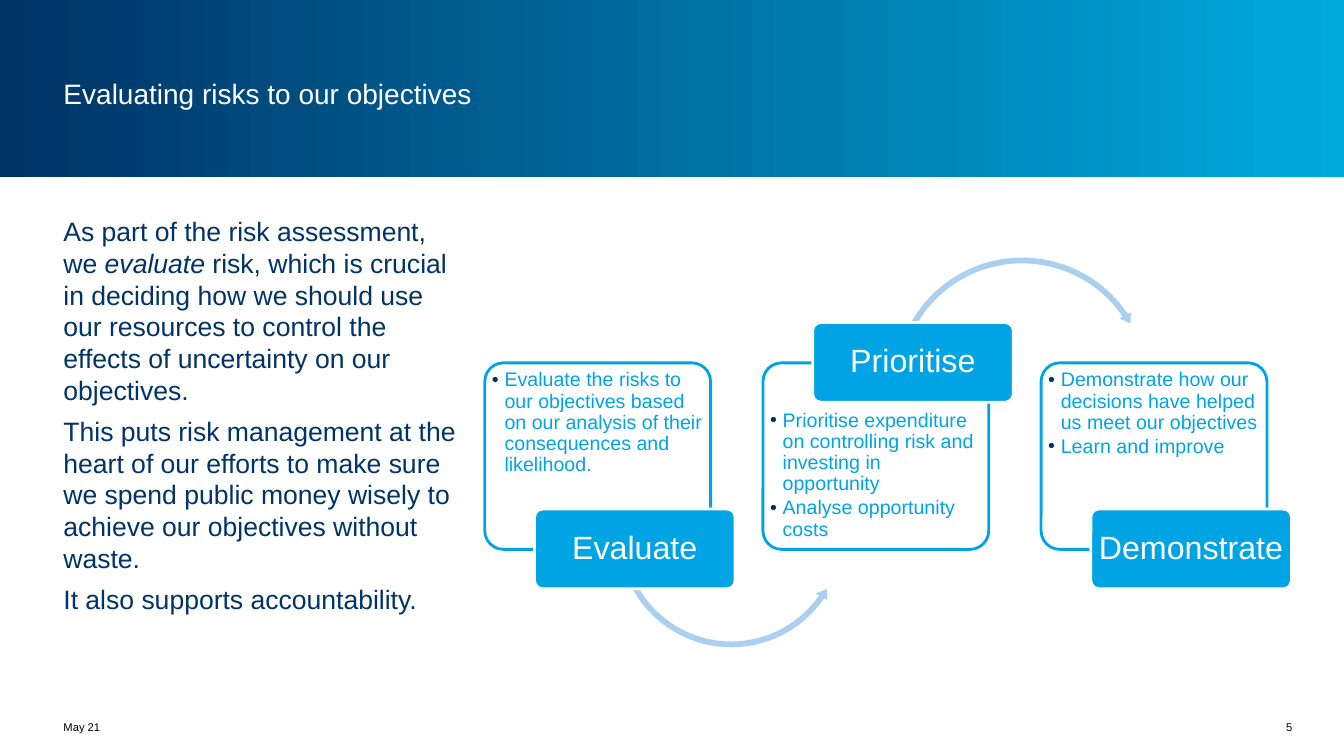
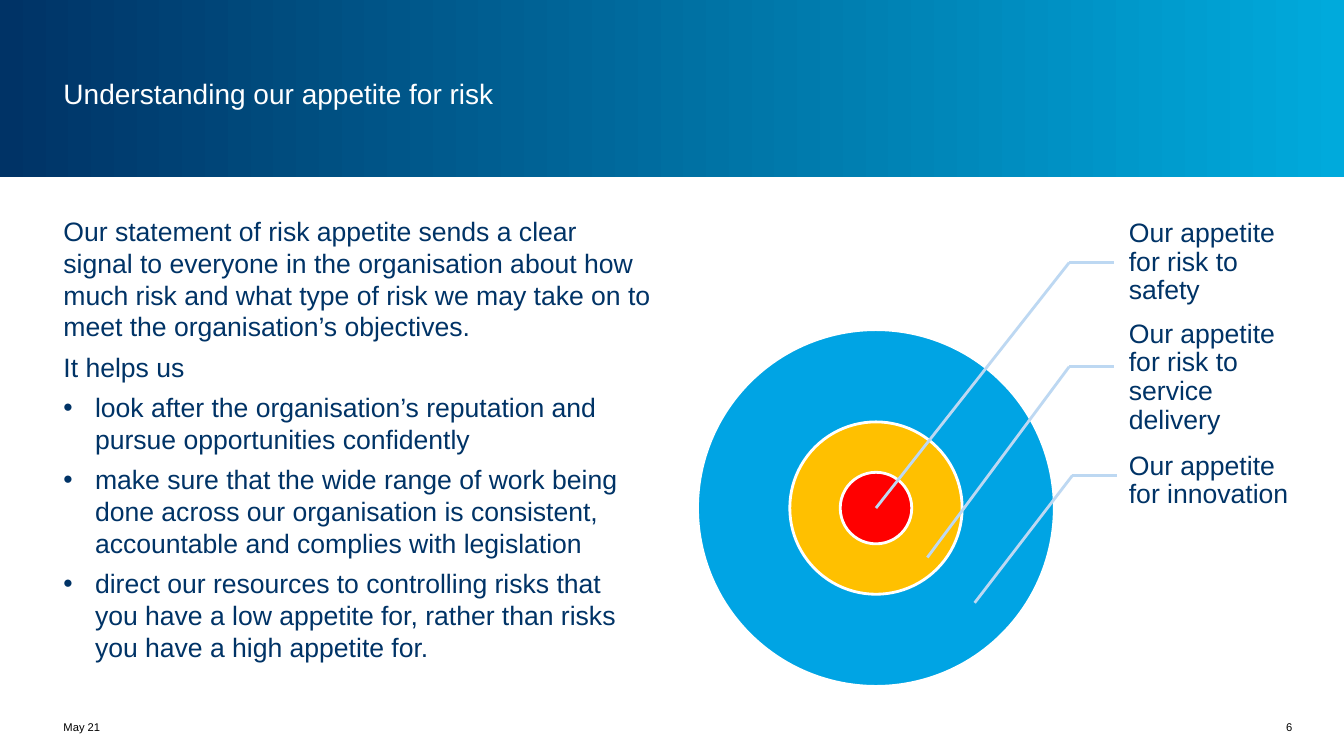
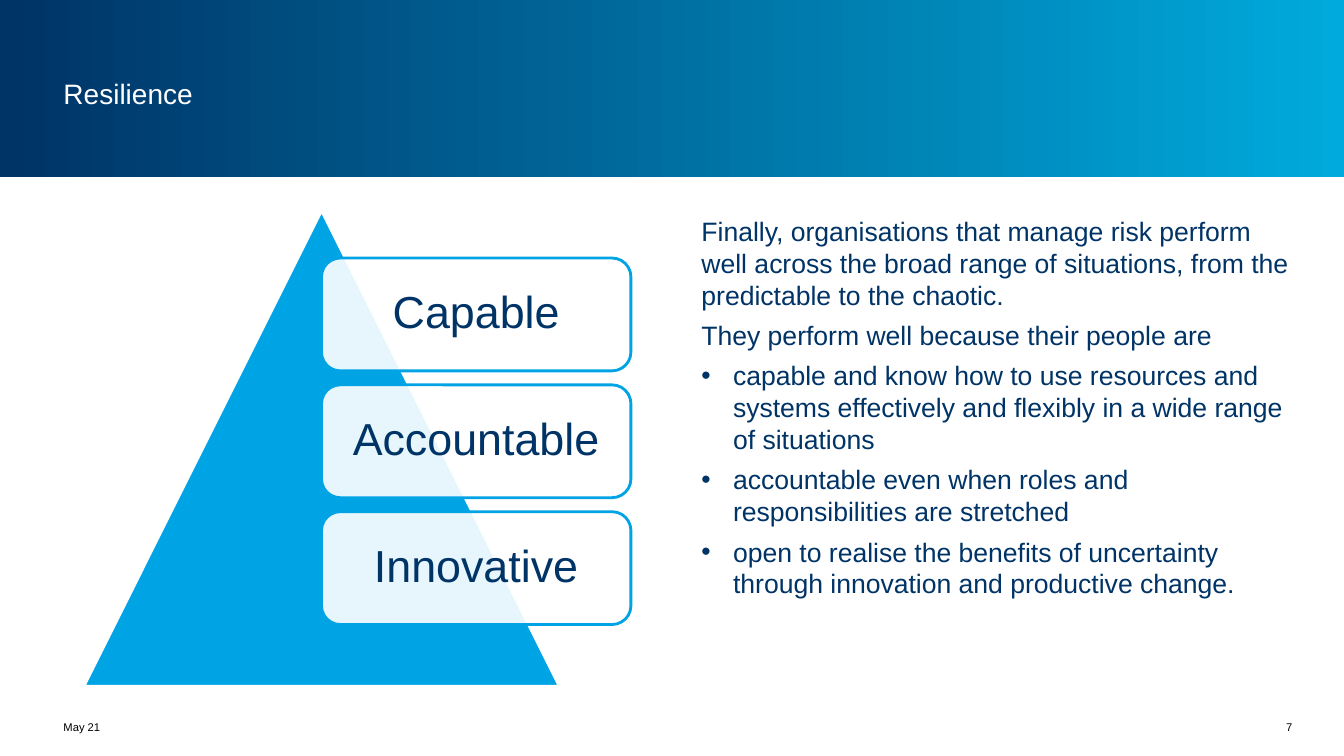
from dataclasses import dataclass

from lxml import etree
from pptx import Presentation
from pptx.dml.color import RGBColor
from pptx.enum.shapes import MSO_CONNECTOR, MSO_SHAPE
from pptx.enum.text import MSO_ANCHOR, MSO_AUTO_SIZE, PP_ALIGN
from pptx.oxml.ns import qn
from pptx.presentation import Presentation as Deck
from pptx.shapes.autoshape import Shape
from pptx.shapes.connector import Connector
from pptx.slide import Slide, SlideLayout
from pptx.text.text import TextFrame
from pptx.util import Pt

RECTANGLE, ROUNDED = MSO_SHAPE.RECTANGLE, MSO_SHAPE.ROUNDED_RECTANGLE
OVAL, TRIANGLE = MSO_SHAPE.OVAL, MSO_SHAPE.ISOSCELES_TRIANGLE
ARC_UNDER, ARC_OVER = MSO_SHAPE.LEFT_CIRCULAR_ARROW, MSO_SHAPE.CIRCULAR_ARROW
TOP, MIDDLE = MSO_ANCHOR.TOP, MSO_ANCHOR.MIDDLE
LEFT, CENTER, RIGHT = PP_ALIGN.LEFT, PP_ALIGN.CENTER, PP_ALIGN.RIGHT
STRAIGHT = MSO_CONNECTOR.STRAIGHT
LEFT_SIDE = 1

NAVY, SKY, CYAN = "003366", "00A4E4", "00AADC"
WHITE, BLACK, AMBER, RED = "FFFFFF", "000000", "FFC000", "FF0000"
ARC_BLUE, LEADER_BLUE = "ABCFEF", "BDD8F2"
FONT = "Arial"
SLIDE_WIDTH, SLIDE_HEIGHT = 960, 540
MARGIN = 42.5
BODY_TOP, BODY_HEIGHT = 150.5, 339.8
HALF_WIDTH, RIGHT_HALF = 425.5, 498.2
INSET = 2.83

Box = tuple[float, float, float, float]
Insets = tuple[float, float, float, float]


@dataclass(frozen=True)
class TextStyle:
    size: float
    color: str
    align: PP_ALIGN = LEFT
    anchor: MSO_ANCHOR = TOP
    insets: Insets = (INSET,) * 4
    line_spacing: float | None = None
    space_after: float = 0
    indent: float = 0
    bullet_color: str = NAVY


TITLE = TextStyle(20, WHITE, anchor=MIDDLE)
DATE = TextStyle(8, BLACK, anchor=MIDDLE)
NUMBER = TextStyle(8, BLACK, RIGHT, MIDDLE)
BODY = TextStyle(19, NAVY, space_after=6, indent=22.6)
TAG = TextStyle(23, WHITE, CENTER, MIDDLE, (3, 2, 3, 2), 0.9)
LABEL = TextStyle(19, NAVY, LEFT, MIDDLE, (10.8, 2.2, 2.2, 2.2), 0.9)
QUALITY = TextStyle(32, NAVY, CENTER, MIDDLE, (9, 9, 9, 9), 0.9)


@dataclass(frozen=True)
class Step:
    name: str
    points: list[str]
    tag_on_top: bool = False


@dataclass(frozen=True)
class Arc:
    kind: MSO_SHAPE
    left: float
    top: float
    size: float
    adjustments: tuple[float, ...]


@dataclass(frozen=True)
class AppetiteLevel:
    label: str
    diameter: float
    color: str
    label_top: float
    label_height: float
    elbow: tuple[float, float]
    target: tuple[float, float]


STEPS = [
    Step("Evaluate", [
        "• Evaluate the risks to our objectives based on our analysis of their "
        "consequences and likelihood."]),
    Step("Prioritise", [
        "• Prioritise expenditure on controlling risk and investing in opportunity",
        "• Analyse opportunity costs"], tag_on_top=True),
    Step("Demonstrate", [
        "• Demonstrate how our decisions have helped us meet our objectives",
        "• Learn and improve"]),
]
ARCS = [
    Arc(ARC_UNDER, 439.2, 298.8, 166.3, (0.025, 2.974, 20.729, 90.245, 0.029)),
    Arc(ARC_OVER, 636.5, 181.4, 187.2, (0.022, 2.629, 195.616, 125.755, 0.025)),
]
TARGET_CENTER = (625.7, 362.9)
LABEL_LEFT, LABEL_WIDTH, LEADER_LENGTH = 795.6, 127.4, 31.9
# Widest ring first, so that the smaller ones lie on it
LEVELS = [
    AppetiteLevel("Our appetite for innovation", 254.9, SKY,
                  320.4, 46.1, (766, 339.7), (696.2, 430.6)),
    AppetiteLevel("Our appetite for risk to service delivery", 123.1, AMBER,
                  232.6, 74.2, (763.7, 262), (662.4, 398.2)),
    AppetiteLevel("Our appetite for risk to safety", 51.1, RED,
                  150.5, 74.2, (763.7, 187.6), TARGET_CENTER),
]


def rgb(color: str) -> RGBColor:
    return RGBColor.from_string(color)


def write(frame: TextFrame, texts: list[str], style: TextStyle) -> None:
    """Fill a frame; a leading "• " makes a bullet, *stars* make italics."""
    frame.word_wrap = True
    frame.auto_size = MSO_AUTO_SIZE.NONE
    frame.vertical_anchor = style.anchor
    (frame.margin_left, frame.margin_top,
     frame.margin_right, frame.margin_bottom) = map(Pt, style.insets)
    for index, text in enumerate(texts):
        para = frame.add_paragraph() if index else frame.paragraphs[0]
        para.alignment = style.align
        para.line_spacing = style.line_spacing
        para.space_after = Pt(style.space_after)
        if text.startswith("• "):
            text = text.removeprefix("• ")
            properties = para._p.get_or_add_pPr()
            properties.set("marL", str(Pt(style.indent)))
            properties.set("indent", str(-Pt(style.indent)))
            bullet_color = etree.SubElement(properties, qn("a:buClr"))
            etree.SubElement(bullet_color, qn("a:srgbClr"), val=style.bullet_color)
            etree.SubElement(properties, qn("a:buFont"), typeface=FONT)
            etree.SubElement(properties, qn("a:buChar"), char="•")
        para.font.name = FONT
        para.font.size = Pt(style.size)
        para.font.color.rgb = rgb(style.color)
        for position, part in enumerate(text.split("*")):
            span = para.add_run()
            span.text = part
            if position % 2:
                span.font.italic = True


def add_text(page: Slide, area: Box, texts: list[str], style: TextStyle) -> Shape:
    box = page.shapes.add_textbox(*map(Pt, area))
    write(box.text_frame, texts, style)
    return box


def add_figure(page: Slide, kind: MSO_SHAPE, area: Box, fill: str,
               line: str | None = None, opacity: int = 100) -> Shape:
    figure = page.shapes.add_shape(kind, *map(Pt, area))
    figure.shadow.inherit = False
    figure.fill.solid()
    figure.fill.fore_color.rgb = rgb(fill)
    if opacity < 100:
        color = figure.element.spPr.find(qn("a:solidFill")).find(qn("a:srgbClr"))
        etree.SubElement(color, qn("a:alpha"), val=str(opacity * 1000))
    if line:
        figure.line.color.rgb = rgb(line)
        figure.line.width = Pt(2)
    else:
        figure.line.fill.background()
    return figure


def add_leader(page: Slide, start: tuple[float, float],
               end: tuple[float, float]) -> Connector:
    leader = page.shapes.add_connector(STRAIGHT, *map(Pt, (*start, *end)))
    leader.line.color.rgb = rgb(LEADER_BLUE)
    leader.line.width = Pt(2)
    etree.SubElement(leader.element.spPr, qn("a:effectLst"))
    return leader


def add_layout_band(page: Slide, layout: SlideLayout) -> None:
    """Draw the title band and move it to the layout all pages share."""
    band = add_figure(page, RECTANGLE, (0, 0, SLIDE_WIDTH, 126.7), NAVY)
    band.fill.gradient()
    band.fill.gradient_angle = 0
    for stop, color in zip(band.fill.gradient_stops, (NAVY, CYAN)):
        stop.color.rgb = rgb(color)
    band.element.nvSpPr.cNvPr.set("id", "20")
    layout.shapes.element.insert(2, band.element)


def add_page(deck: Deck, layout: SlideLayout, title: str, number: int) -> Slide:
    page = deck.slides.add_slide(layout)
    heading = page.shapes.title
    heading.left, heading.top, heading.width, heading.height = map(
        Pt, (MARGIN, 21.6, 717.8, 90.7))
    write(heading.text_frame, [title], TITLE)
    add_text(page, (MARGIN, 510.5, 151.2, 17.3), ["May 21"], DATE)
    add_text(page, (850.3, 510.5, 75.6, 17.3), [str(number)], NUMBER)
    return page


def add_body(page: Slide, left: float, width: float, texts: list[str]) -> None:
    add_text(page, (left, BODY_TOP, width, BODY_HEIGHT), texts, BODY)


def draw_steps(page: Slide) -> None:
    for index, step in enumerate(STEPS):
        left = 346.3 + index * 198.7
        card = add_figure(page, ROUNDED, (left, 259.2, 161.3, 133.2), WHITE, SKY, 90)
        card.adjustments[0] = 0.1
        inset_top = 30 if step.tag_on_top else 1.2
        write(card.text_frame, step.points, TextStyle(
            14, SKY, insets=(1.2, inset_top, 1.2, 1.2), line_spacing=0.9,
            space_after=2, indent=9))
        if index < len(ARCS):
            arc = ARCS[index]
            arrow = add_figure(page, arc.kind, (arc.left, arc.top, arc.size, arc.size),
                               ARC_BLUE)
            for position, value in enumerate(arc.adjustments):
                arrow.adjustments[position] = value
        tag_top = 230.4 if step.tag_on_top else 363.6
        tag = add_figure(page, ROUNDED, (left + 35.5, tag_top, 143.3, 56.9), SKY, WHITE)
        tag.adjustments[0] = 0.1
        write(tag.text_frame, [step.name], TAG)


def draw_target(page: Slide) -> None:
    center_x, center_y = TARGET_CENTER
    for level in LEVELS:
        size = level.diameter
        add_figure(page, OVAL, (center_x - size / 2, center_y - size / 2, size, size),
                   level.color, WHITE)
    for level in reversed(LEVELS):
        label = add_text(page, (LABEL_LEFT, level.label_top, LABEL_WIDTH,
                                level.label_height), [level.label], LABEL)
        elbow_x, elbow_y = level.elbow
        leader = add_leader(page, level.elbow, (elbow_x + LEADER_LENGTH, elbow_y))
        if abs(level.label_top + level.label_height / 2 - elbow_y) < 1:
            leader.end_connect(label, LEFT_SIDE)
        add_leader(page, level.elbow, level.target)


def draw_pyramid(page: Slide) -> None:
    add_figure(page, TRIANGLE, (59.8, BODY_TOP, 339.8, BODY_HEIGHT), SKY, WHITE)
    for index, name in enumerate(("Capable", "Accountable", "Innovative")):
        top = 184.3 + index * 90.6
        quality = add_figure(page, ROUNDED, (229.7, top, 221, 80.6), WHITE, SKY, 90)
        write(quality.text_frame, [name], QUALITY)


def main() -> None:
    deck = Presentation()
    deck.slide_width, deck.slide_height = Pt(SLIDE_WIDTH), Pt(SLIDE_HEIGHT)
    layout = deck.slide_layouts[5]

    page = add_page(deck, layout, "Evaluating risks to our objectives", 5)
    add_layout_band(page, layout)
    add_body(page, MARGIN, 293, [
        "As part of the risk assessment, we *evaluate* risk, which is crucial in "
        "deciding how we should use our resources to control the effects of "
        "uncertainty on our objectives.",
        "This puts risk management at the heart of our efforts to make sure we spend "
        "public money wisely to achieve our objectives without waste.",
        "It also supports accountability."])
    draw_steps(page)

    page = add_page(deck, layout, "Understanding our appetite for risk", 6)
    add_body(page, MARGIN, HALF_WIDTH, [
        "Our statement of risk appetite sends a clear signal to everyone in the "
        "organisation about how much risk and what type of risk we may take on to "
        "meet the organisation’s objectives.",
        "It helps us",
        "• look after the organisation’s reputation and pursue opportunities "
        "confidently",
        "• make sure that the wide range of work being done across our organisation "
        "is consistent, accountable and complies with legislation",
        "• direct our resources to controlling risks that you have a low appetite "
        "for, rather than risks you have a high appetite for."])
    draw_target(page)

    page = add_page(deck, layout, "Resilience", 7)
    draw_pyramid(page)
    add_body(page, RIGHT_HALF, HALF_WIDTH, [
        "Finally, organisations that manage risk perform well across the broad range "
        "of situations, from the predictable to the chaotic.",
        "They perform well because their people are",
        "• capable and know how to use resources and systems effectively and "
        "flexibly in a wide range of situations",
        "• accountable even when roles and responsibilities are stretched",
        "• open to realise the benefits of uncertainty through innovation and "
        "productive change."])

    deck.save("out.pptx")


if __name__ == "__main__":
    main()
